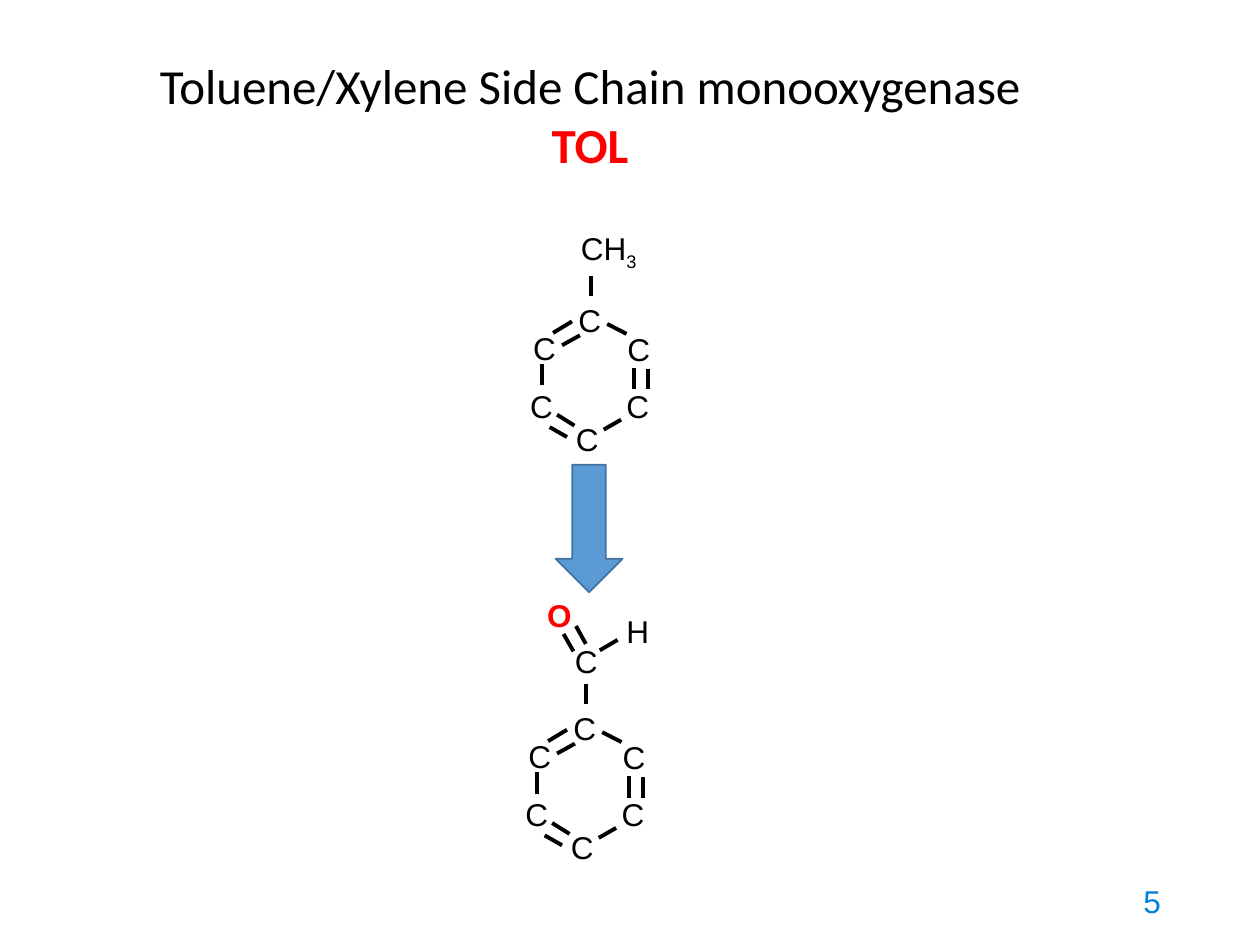
"""Build a slide showing toluene side-chain oxidation by the TOL monooxygenase."""
from pptx import Presentation
from pptx.dml.color import RGBColor
from pptx.enum.shapes import MSO_CONNECTOR as Connector, MSO_SHAPE as Shape
from pptx.enum.text import MSO_ANCHOR as Anchor, MSO_AUTO_SIZE as AutoSize, PP_ALIGN as Align
from pptx.oxml.ns import qn
from pptx.util import Cm, Pt
from lxml.etree import SubElement

COLORS = {"ink": "000000", "accent": "FF0000", "arrow": "5B9BD5",
          "arrow_edge": "43739E", "number": "0082DA"}
TITLE = [("Toluene/Xylene Side Chain monooxygenase ", "ink", {}),
         ("TOL", "accent", {"bold": True})]
PAGE = "5"

RING_ATOMS = [(0, 0), (-0.91, 0.56), (-0.97, 1.73), (0.99, 0.58), (0.97, 1.73), (-0.05, 2.39)]
RING_BONDS = [
    (0.25, -0.51, 0.25, -0.1),
    (-0.13, 0.41, -0.51, 0.64), (0.03, 0.69, -0.33, 0.89),
    (-0.74, 1.27, -0.74, 1.7),
    (-0.43, 2.29, -0.08, 2.51), (-0.58, 2.54, -0.23, 2.74),
    (0.86, 2.39, 0.51, 2.59),
    (1.12, 1.35, 1.12, 1.78), (1.4, 1.37, 1.4, 1.78),
    (0.58, 0.46, 0.97, 0.66),
]
MOLECULES = [
    {"origin": (11.66, 6.07),
     "atoms": [("CH", "3", 0.05, -1.45, "ink")],
     "bonds": []},
    {"origin": (11.56, 14.3),
     "atoms": [("C", "", 0.03, -1.35, "ink"), ("O", "", -0.53, -2.29, "accent"),
               ("H", "", 1.07, -1.96, "ink")],
     "bonds": [(-0.2, -1.52, 0, -1.17), (0.05, -1.68, 0.25, -1.32),
               (0.89, -1.4, 0.53, -1.19)]},
]

ATOM_FONT = {"name": "Arial", "size": Pt(18), "bold": False}
TITLE_FONT = {"name": "Calibri", "size": Pt(28), "bold": False}
TITLE_FRAME = {"word_wrap": True, "auto_size": AutoSize.NONE, "vertical_anchor": Anchor.TOP}
ATOM_FRAME = {"margin_left": 0, "margin_right": 0, "margin_top": 0, "margin_bottom": 0,
              "word_wrap": True, "auto_size": AutoSize.SHAPE_TO_FIT_TEXT}
PAGE_FRAME = {"word_wrap": True, "vertical_anchor": Anchor.MIDDLE}


def color(key):
    return RGBColor.from_string(COLORS[key])


def apply(target, values):
    for attribute, value in values.items():
        setattr(target, attribute, value)


def add_run(paragraph, wording, ink, font):
    run = paragraph.add_run()
    run.text = wording
    apply(run.font, font)
    run.font.color.rgb = color(ink)
    return run


def add_label(slide, box, frame_format):
    frame = slide.shapes.add_textbox(*map(Cm, box)).text_frame
    apply(frame, frame_format)
    return frame.paragraphs[0]


def add_atom(slide, symbol, count, left, top, ink="ink"):
    width = 1.32 if count else 0.64
    label = add_label(slide, (left, top, width, 0.76), ATOM_FRAME)
    add_run(label, symbol, ink, ATOM_FONT | {"bold": ink == "accent"})
    if count:
        subscript = add_run(label, count, ink, ATOM_FONT)
        subscript.font._element.set("baseline", "-25000")


def add_bond(slide, *ends):
    bond = slide.shapes.add_connector(Connector.STRAIGHT, *map(Cm, ends))
    bond.line.color.rgb = color("ink")
    bond.line.width = Pt(2.25)
    SubElement(bond._element.spPr, qn("a:effectLst"))


def add_molecule(slide, origin, atoms, bonds):
    x, y = origin
    ring = [("C", "", dx, dy, "ink") for dx, dy in RING_ATOMS]
    for symbol, count, dx, dy, ink in ring + atoms:
        add_atom(slide, symbol, count, x + dx, y + dy, ink)
    for x1, y1, x2, y2 in RING_BONDS + bonds:
        add_bond(slide, x + x1, y + y1, x + x2, y + y2)


def add_title(slide):
    title = slide.shapes.title
    apply(title, {"left": Cm(2.46), "top": Cm(0.99), "width": Cm(18.87), "height": Cm(2.64)})
    apply(title.text_frame, TITLE_FRAME)
    heading = title.text_frame.paragraphs[0]
    heading.alignment = Align.CENTER
    for wording, ink, extra in TITLE:
        add_run(heading, wording, ink, TITLE_FONT | extra)


def add_reaction_arrow(slide):
    arrow = slide.shapes.add_shape(Shape.DOWN_ARROW, Cm(11.2), Cm(9.37), Cm(1.35), Cm(2.57))
    arrow.shadow.inherit = False
    arrow.fill.solid()
    arrow.fill.fore_color.rgb = color("arrow")
    arrow.line.color.rgb = color("arrow_edge")
    arrow.line.width = Pt(1)


def main():
    deck = Presentation()
    apply(deck, {"slide_width": Cm(25.4), "slide_height": Cm(19.05)})
    slide = deck.slides.add_slide(deck.slide_layouts[5])
    add_title(slide)
    for molecule in MOLECULES:
        add_molecule(slide, **molecule)
    add_reaction_arrow(slide)
    page = add_label(slide, (17.93, 17.65, 5.72, 1.02), PAGE_FRAME)
    page.alignment = Align.RIGHT
    add_run(page, PAGE, "number", ATOM_FONT)
    deck.save("out.pptx")


if __name__ == "__main__":
    main()
